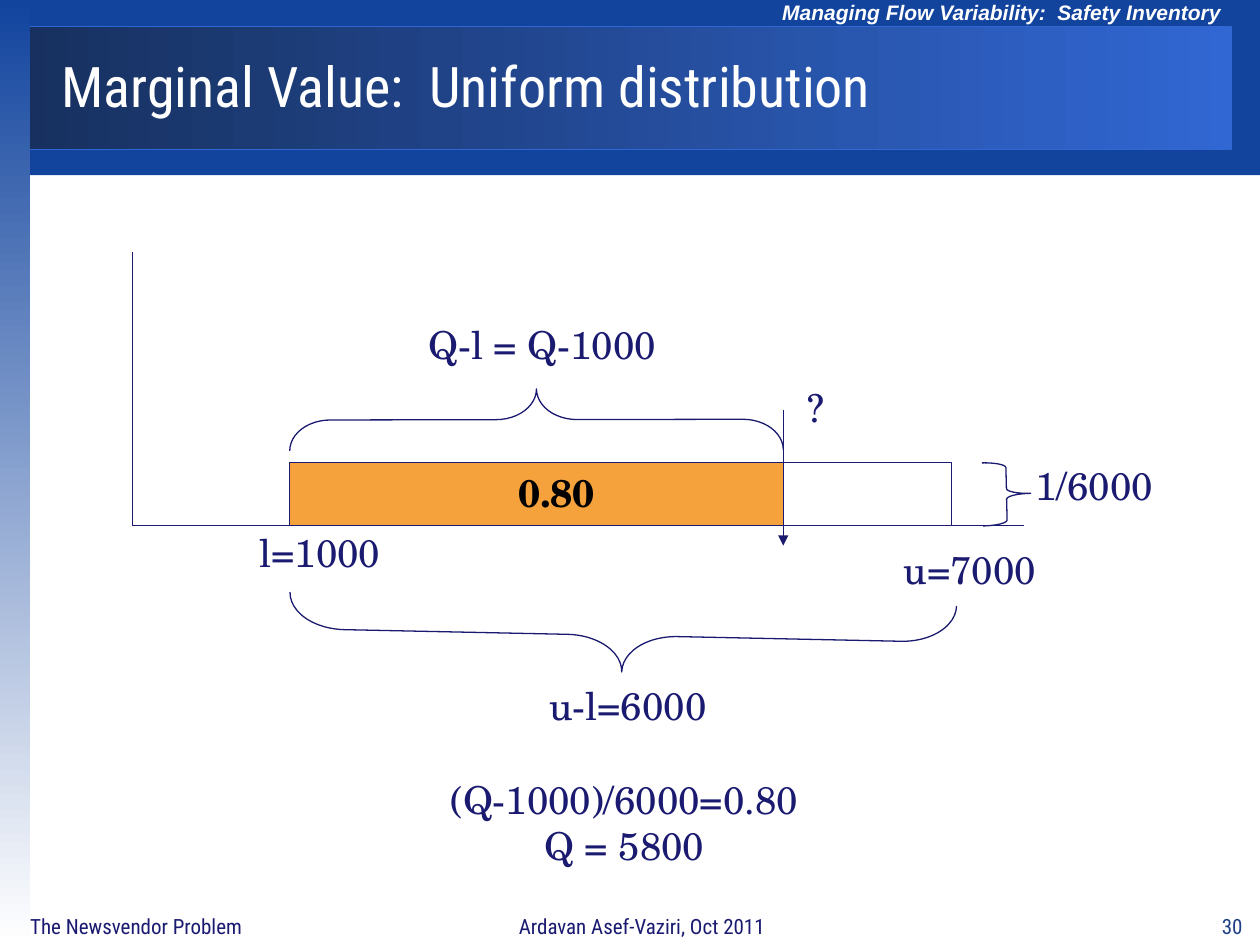
import pptx
import pptx.util
from dataclasses import dataclass
from lxml import etree
from pptx.dml.color import RGBColor
from pptx.enum.shapes import MSO_CONNECTOR, MSO_SHAPE
from pptx.enum.text import MSO_ANCHOR, PP_ALIGN
from pptx.oxml.ns import qn
from pptx.util import Cm


@dataclass(frozen=True)
class Theme:
    ink: str = "1A1A70"
    black: str = "000000"
    white: str = "FFFFFF"
    blue: str = "12449E"
    band_dark: str = "17305F"
    band_light: str = "3167D3"
    number: str = "1D4087"
    shade: str = "F6A23C"
    sans: str = "Roboto Condensed"
    serif: str = "TeX Gyre Schola"
    header: str = "Arial"
    title_size: int = 32
    label_size: int = 22
    small_size: int = 12
    line: float = 0.75


T = Theme()


def rgb(color):
    return RGBColor.from_string(color)


def add_shape(s, kind, x, y, w, h, fill=None, line=None):
    sp = s.shapes.add_shape(kind, Cm(x), Cm(y), Cm(w), Cm(h))
    sp.shadow.inherit = False
    if fill:
        sp.fill.solid()
        sp.fill.fore_color.rgb = rgb(fill)
    else:
        sp.fill.background()
    if line:
        sp.line.color.rgb = rgb(line)
        sp.line.width = pptx.util.Pt(T.line)
    else:
        sp.line.fill.background()
    return sp


def set_gradient(sp, start, end, angle):
    sp.fill.gradient()
    sp.fill.gradient_angle = angle
    for stop, color in zip(sp.fill.gradient_stops, (start, end)):
        stop.color.rgb = rgb(color)


def add_line(s, x1, y1, x2, y2, arrow=False):
    cx = s.shapes.add_connector(MSO_CONNECTOR.STRAIGHT, Cm(x1), Cm(y1), Cm(x2), Cm(y2))
    cx.line.color.rgb = rgb(T.ink)
    cx.line.width = pptx.util.Pt(T.line)
    if arrow:
        etree.SubElement(cx.line._get_or_add_ln(), qn("a:tailEnd"), type="triangle")
    etree.SubElement(cx._element.spPr, qn("a:effectLst"))


def add_text(s, text, x, y, w, h, font, size, color, bold=False, italic=False,
             align=PP_ALIGN.LEFT, anchor=MSO_ANCHOR.TOP, wrap=True):
    tf = s.shapes.add_textbox(Cm(x), Cm(y), Cm(w), Cm(h)).text_frame
    tf.word_wrap = wrap
    tf.vertical_anchor = anchor
    tf.text = text
    for p in tf.paragraphs:
        p.alignment = align
        p.font.name, p.font.size = font, pptx.util.Pt(size)
        p.font.color.rgb = rgb(color)
        p.font.bold, p.font.italic = bold, italic


def add_label(s, text, cx, cy, w, h=1.19, color=T.ink, bold=False):
    add_text(s, text, cx - w / 2, cy - h / 2, w, h, T.serif, T.label_size, color,
             bold=bold, align=PP_ALIGN.CENTER, wrap=False)


def add_brace(s, cx, cy, depth, span, rotation, curve):
    sp = add_shape(s, MSO_SHAPE.LEFT_BRACE, cx - depth / 2, cy - span / 2, depth, span,
                   line=T.ink)
    sp.adjustments[0] = curve
    sp.rotation = rotation


def draw_header(s, x, y, w, h):
    add_shape(s, MSO_SHAPE.RECTANGLE, x, y, w, h, T.blue)
    band = add_shape(s, MSO_SHAPE.RECTANGLE, x, y + 0.53, w - 0.58, 2.49, line=T.band_light)
    set_gradient(band, T.band_dark, T.band_light, 0)
    add_text(s, "Managing Flow Variability:  Safety Inventory", x + 15.01, y - 0.13, 9.88, 0.76,
             T.header, T.small_size, T.white, bold=True, italic=True)
    add_text(s, "Marginal Value:  Uniform distribution", x + 0.48, y + 0.53, 23.6, 2.39,
             T.sans, T.title_size, T.white, anchor=MSO_ANCHOR.MIDDLE)


def draw_sidebar(s, x, y, w, h):
    bar = add_shape(s, MSO_SHAPE.RECTANGLE, x, y, w, h)
    set_gradient(bar, T.blue, T.white, 270)


def draw_footer(s, x, y, h):
    for text, dx, w, color in (
        ("The Newsvendor Problem", 0.36, 5.84, T.ink),
        ("Ardavan Asef-Vaziri, Oct 2011", 10.21, 7.11, T.ink),
        ("30", 24.38, 0.94, T.number),
    ):
        add_text(s, text, x + dx, y, w, h, T.sans, T.small_size, color, wrap=False)


def draw_distribution(s, x, y, w, h):
    base = y + h
    low, full, shaded, bar = x + 3.17, 13.34, 9.95, 1.27
    order, middle = low + shaded, base - bar / 2

    # Axes
    add_line(s, x, y, x, base)
    add_line(s, x, base, x + w, base)

    # Density bar, its shaded share and the order quantity
    for width, fill in ((full, None), (shaded, T.shade)):
        add_shape(s, MSO_SHAPE.RECTANGLE, low, base - bar, width, bar, fill, T.ink)
    add_line(s, order, y + 3.18, order, base + 0.41, arrow=True)

    # Braces
    add_brace(s, low + shaded / 2, y + 3.38, 1.24, shaded, 89.9, 0.66)
    add_brace(s, x + 9.88, y + 7.73, 1.47, 13.44, 271.2, 0.756)
    add_brace(s, x + 17.62, middle, 0.97, bar, 178.7, 0.109)

    # Labels
    for text, dx, dy, width in (
        ("l=1000", 3.78, 6.06, 3),
        ("u=7000", 16.88, 6.39, 3.28),
        ("?", 13.78, 3.14, 0.89),
        ("u-l=6000", 9.99, 9.13, 3.84),
        ("1/6000", 19.39, 4.71, 3.07),
        ("Q-l = Q-1000", 8.26, 1.87, 5.11),
    ):
        add_label(s, text, x + dx, y + dy, width)
    add_label(s, "0.80", x + 8.55, y + 4.84, 2.39, color=T.black, bold=True)


def draw_solution(s, x, y, w, h):
    add_label(s, "(Q-1000)/6000=0.80\nQ = 5800", x + w / 2, y + h / 2, w, h)


def main():
    prs = pptx.Presentation()
    prs.slide_width, prs.slide_height = Cm(25.4), Cm(19.05)
    s = prs.slides.add_slide(prs.slide_layouts[6])
    draw_header(s, 0.51, 0, 24.89, 3.53)
    draw_sidebar(s, 0, 0, 0.61, 19.05)
    draw_footer(s, 0, 18.29, 0.76)
    draw_distribution(s, 2.67, 5.08, 17.98, 5.51)
    draw_solution(s, 8.51, 15.52, 8.15, 2.13)
    prs.save("out.pptx")


if __name__ == "__main__":
    main()
